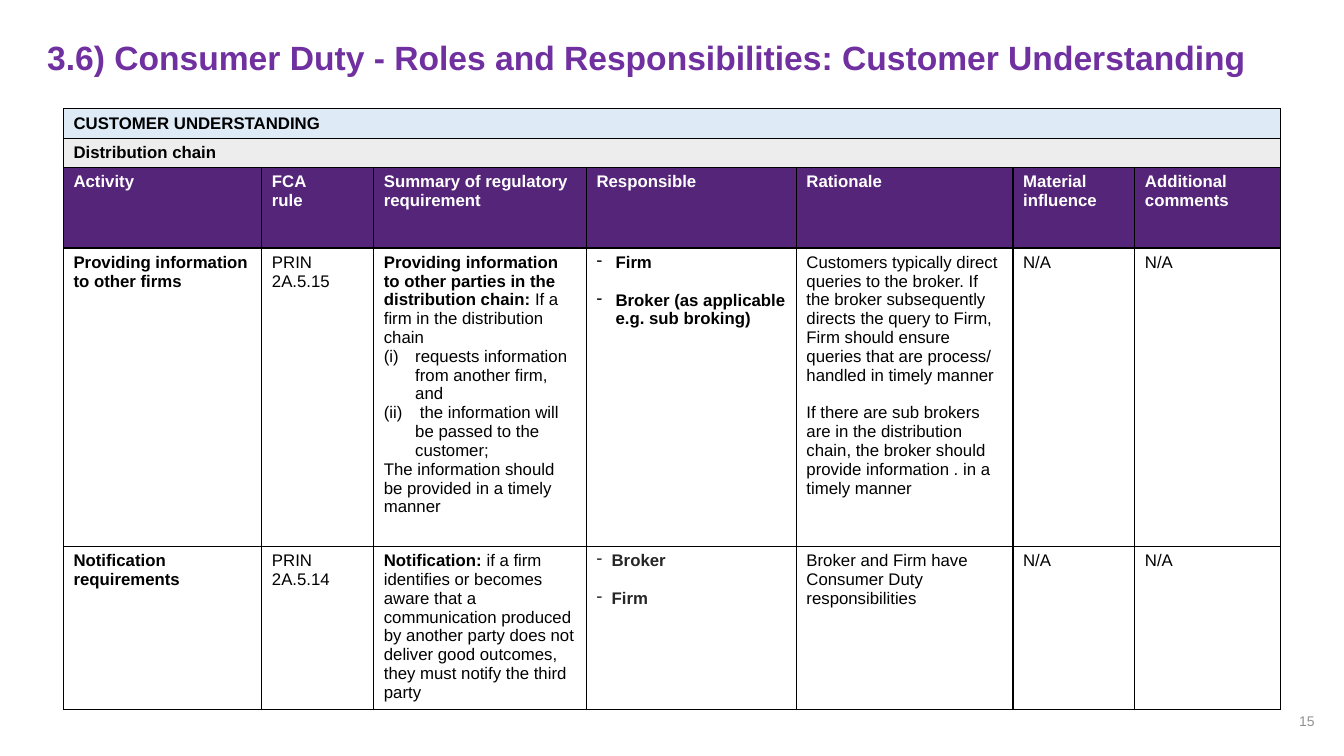
from collections import namedtuple

from lxml import etree
from pptx import Presentation
from pptx.dml.color import RGBColor
from pptx.enum.text import MSO_ANCHOR, PP_ALIGN
from pptx.oxml.ns import qn
from pptx.util import Cm, Pt

MIDDLE = MSO_ANCHOR.MIDDLE
LEFT, RIGHT = PP_ALIGN.LEFT, PP_ALIGN.RIGHT

BLACK = RGBColor(0x00, 0x00, 0x00)
WHITE = RGBColor(0xFF, 0xFF, 0xFF)
CHARCOAL = RGBColor(0x26, 0x26, 0x26)
GREY = RGBColor(0x92, 0x92, 0x92)
TITLE_PURPLE = RGBColor(0x70, 0x30, 0xA0)
HEADER_PURPLE = RGBColor(0x55, 0x25, 0x79)
PALE_BLUE = RGBColor(0xDE, 0xEB, 0xF7)
PALE_GREY = RGBColor(0xED, 0xED, 0xED)

# Content: a cell is a list of paragraphs, each with an optional bold lead
Item = namedtuple("Item", "text lead bullet indent gap color",
                  defaults=("", None, 0, False, BLACK))
ROMAN, DASH = "romanLcParenBoth", "-"

TITLE = "3.6) Consumer Duty - Roles and Responsibilities: Customer Understanding"
PAGE_NUMBER = "15"
BANDS = [("CUSTOMER UNDERSTANDING", PALE_BLUE), ("Distribution chain", PALE_GREY)]
HEADERS = [["Activity"], ["FCA", "rule"], ["Summary of regulatory requirement"],
           ["Responsible"], ["Rationale"], ["Material influence"],
           ["Additional comments"]]
ACTIVITIES = [
    [
        [Item("Providing information to other firms")],
        [Item("PRIN 2A.5.15")],
        [Item("If a firm in the distribution chain",
              lead="Providing information to other parties in the distribution chain: "),
         Item("requests information from another firm, and", bullet=ROMAN, indent=0.79),
         Item(" the information will be passed to the customer;",
              bullet=ROMAN, indent=0.79),
         Item("The information should be provided in a timely manner")],
        [Item("Firm", bullet=DASH, indent=0.48),
         Item("Broker (as applicable e.g. sub broking)",
              bullet=DASH, indent=0.48, gap=True)],
        [Item("Customers typically direct queries to the broker. If the broker "
              "subsequently directs the query to Firm, Firm should ensure queries "
              "that are process/ handled in timely manner"),
         Item("If there are sub brokers are in the distribution chain, the broker "
              "should provide information . in a timely manner", gap=True)],
        [Item("N/A")],
        [Item("N/A")],
    ],
    [
        [Item("Notification requirements")],
        [Item("PRIN 2A.5.14")],
        [Item("if a firm identifies or becomes aware that a communication produced "
              "by another party does not deliver good outcomes, they must notify "
              "the third party", lead="Notification: ")],
        [Item("Broker", bullet=DASH, indent=0.38, color=CHARCOAL),
         Item("Firm", bullet=DASH, indent=0.38, gap=True, color=CHARCOAL)],
        [Item("Broker and Firm have Consumer Duty responsibilities")],
        [Item("N/A")],
        [Item("N/A")],
    ],
]
BOLD_COLUMNS = (0, 3)

# Layout in centimetres
COLUMN_WIDTHS = [5.0, 2.82, 5.36, 5.29, 5.46, 3.07, 3.67]
ROW_HEIGHTS = [0.74, 0.74, 2.03, 7.52, 4.11]
TABLE_LEFT, TABLE_TOP = 1.6, 2.74


def add_text(paragraph, text, size=12, color=BLACK, bold=False, align=LEFT):
    paragraph.alignment = align
    run = paragraph.add_run()
    run.text = text
    run.font.name = "Arial"
    run.font.size = Pt(size)
    run.font.bold = bold
    run.font.color.rgb = color


def set_bullet(paragraph, bullet, indent):
    properties = paragraph._p.get_or_add_pPr()
    properties.set("marL", str(Cm(indent)))
    properties.set("indent", str(-Cm(indent)))
    if bullet == DASH:
        etree.SubElement(properties, qn("a:buChar"), char=DASH)
    else:
        etree.SubElement(properties, qn("a:buAutoNum"), type=bullet)


def style_cell(cell, fill):
    properties = cell._tc.get_or_add_tcPr()
    for side in ("a:lnL", "a:lnR", "a:lnT", "a:lnB"):
        line = etree.SubElement(properties, qn(side), w=str(Pt(1)))
        solid = etree.SubElement(line, qn("a:solidFill"))
        etree.SubElement(solid, qn("a:srgbClr"), val=str(BLACK))
    cell.fill.solid()
    cell.fill.fore_color.rgb = fill


def fill_cell(cell, items, bold):
    frame = cell.text_frame
    for index, item in enumerate(items):
        paragraph = frame.add_paragraph() if index else frame.paragraphs[0]
        if item.gap:
            paragraph.space_before = Pt(13.5)
        if item.bullet:
            set_bullet(paragraph, item.bullet, item.indent)
        if item.lead:
            add_text(paragraph, item.lead, bold=True)
        add_text(paragraph, item.text, color=item.color, bold=bold)


def set_frame(frame):
    frame.word_wrap = True
    frame.vertical_anchor = MIDDLE
    frame.margin_left = frame.margin_right = Cm(0.3)
    frame.margin_top = frame.margin_bottom = Cm(0.15)


def add_title(slide):
    title = slide.shapes.title
    title.left, title.top, title.width, title.height = (
        Cm(0.89), Cm(0.89), Cm(32.05), Cm(1.22))
    set_frame(title.text_frame)
    paragraph = title.text_frame.paragraphs[0]
    paragraph.line_spacing = 0.9
    add_text(paragraph, TITLE, size=24, color=TITLE_PURPLE, bold=True)


def add_page_number(slide):
    box = slide.shapes.add_textbox(Cm(25.53), Cm(17.65), Cm(7.9), Cm(1.02))
    set_frame(box.text_frame)
    add_text(box.text_frame.paragraphs[0], PAGE_NUMBER, size=10, color=GREY, align=RIGHT)


def add_duty_table(slide):
    table = slide.shapes.add_table(
        len(ROW_HEIGHTS), len(COLUMN_WIDTHS), Cm(TABLE_LEFT), Cm(TABLE_TOP),
        Cm(sum(COLUMN_WIDTHS)), Cm(sum(ROW_HEIGHTS))).table
    table.first_row = table.horz_banding = False
    for column, width in zip(table.columns, COLUMN_WIDTHS):
        column.width = Cm(width)
    for row, height in zip(table.rows, ROW_HEIGHTS):
        row.height = Cm(height)

    # Cell fills and borders
    fills = [color for _, color in BANDS] + [HEADER_PURPLE] + [WHITE] * len(ACTIVITIES)
    for row, fill in zip(table.rows, fills):
        for cell in row.cells:
            style_cell(cell, fill)

    # Full-width bands
    for row, (text, _) in enumerate(BANDS):
        band = table.cell(row, 0)
        band.merge(table.cell(row, len(COLUMN_WIDTHS) - 1))
        fill_cell(band, [Item(text)], bold=True)

    # Column headers, then activities
    header_row = len(BANDS)
    for column, lines in enumerate(HEADERS):
        items = [Item(line, color=WHITE) for line in lines]
        fill_cell(table.cell(header_row, column), items, bold=True)
    for row, activity in enumerate(ACTIVITIES, header_row + 1):
        for column, items in enumerate(activity):
            fill_cell(table.cell(row, column), items, bold=column in BOLD_COLUMNS)


def main():
    presentation = Presentation()
    presentation.slide_width, presentation.slide_height = Cm(33.87), Cm(19.05)
    slide = presentation.slides.add_slide(presentation.slide_layouts[5])
    add_title(slide)
    add_duty_table(slide)
    add_page_number(slide)
    presentation.save("out.pptx")


if __name__ == "__main__":
    main()
